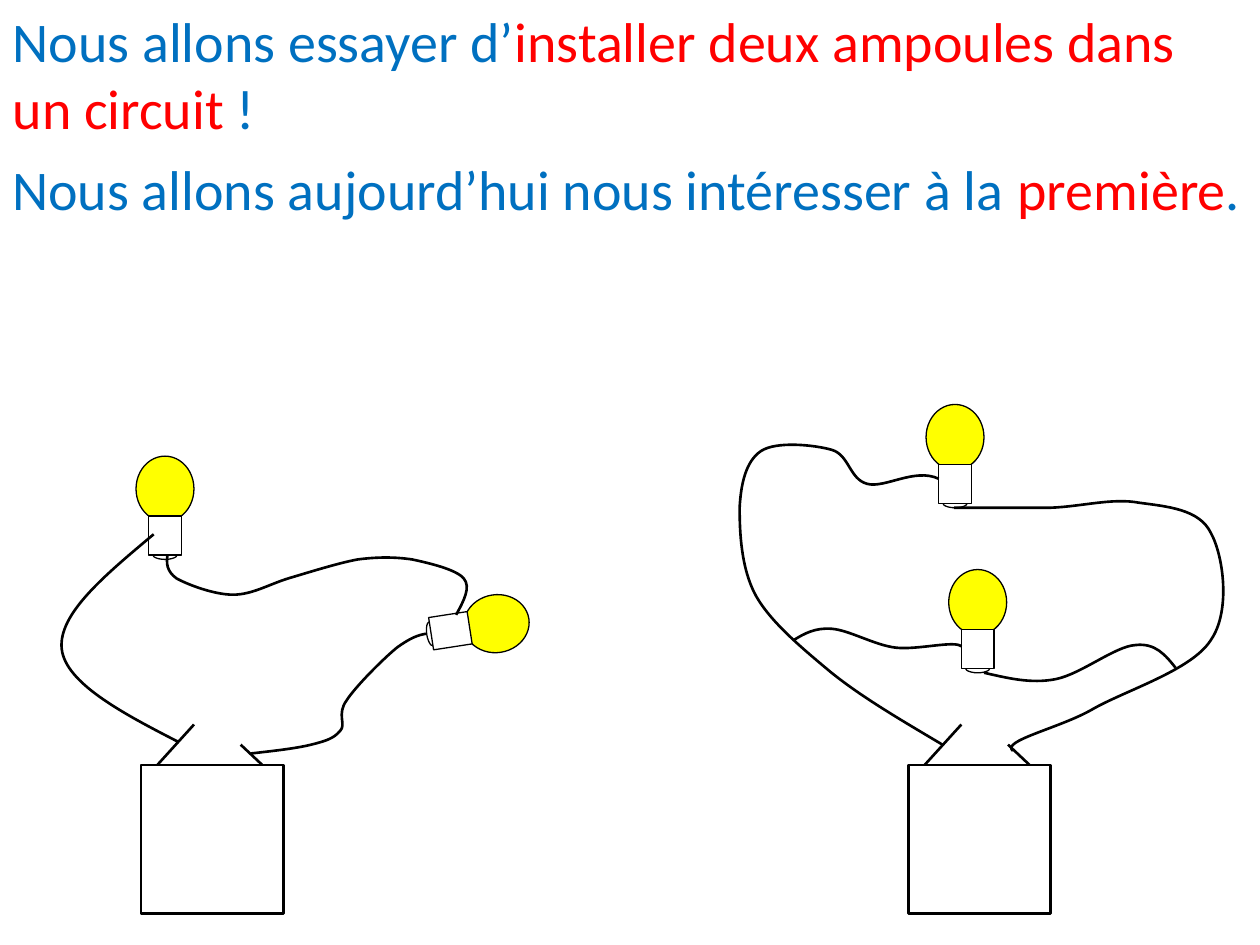
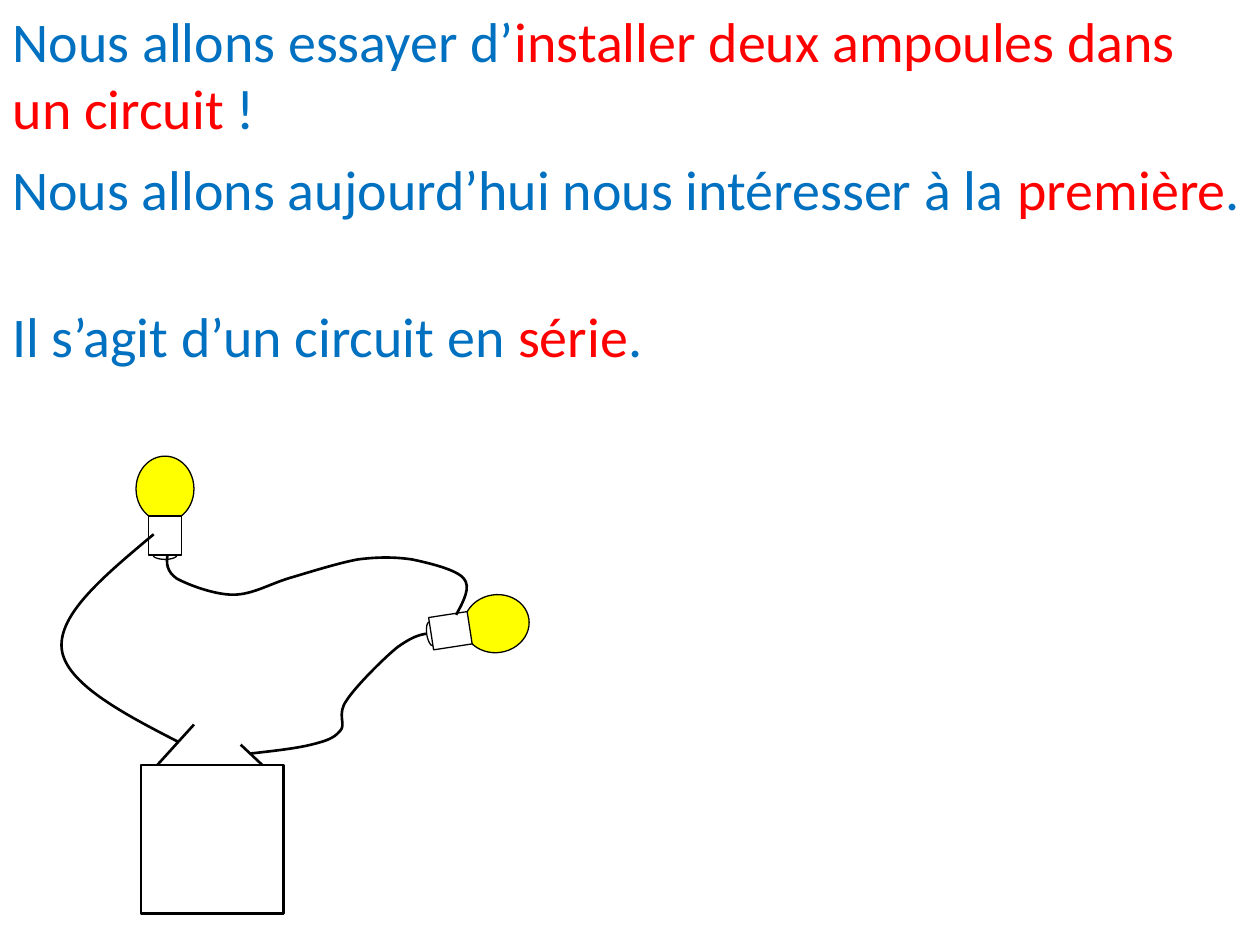
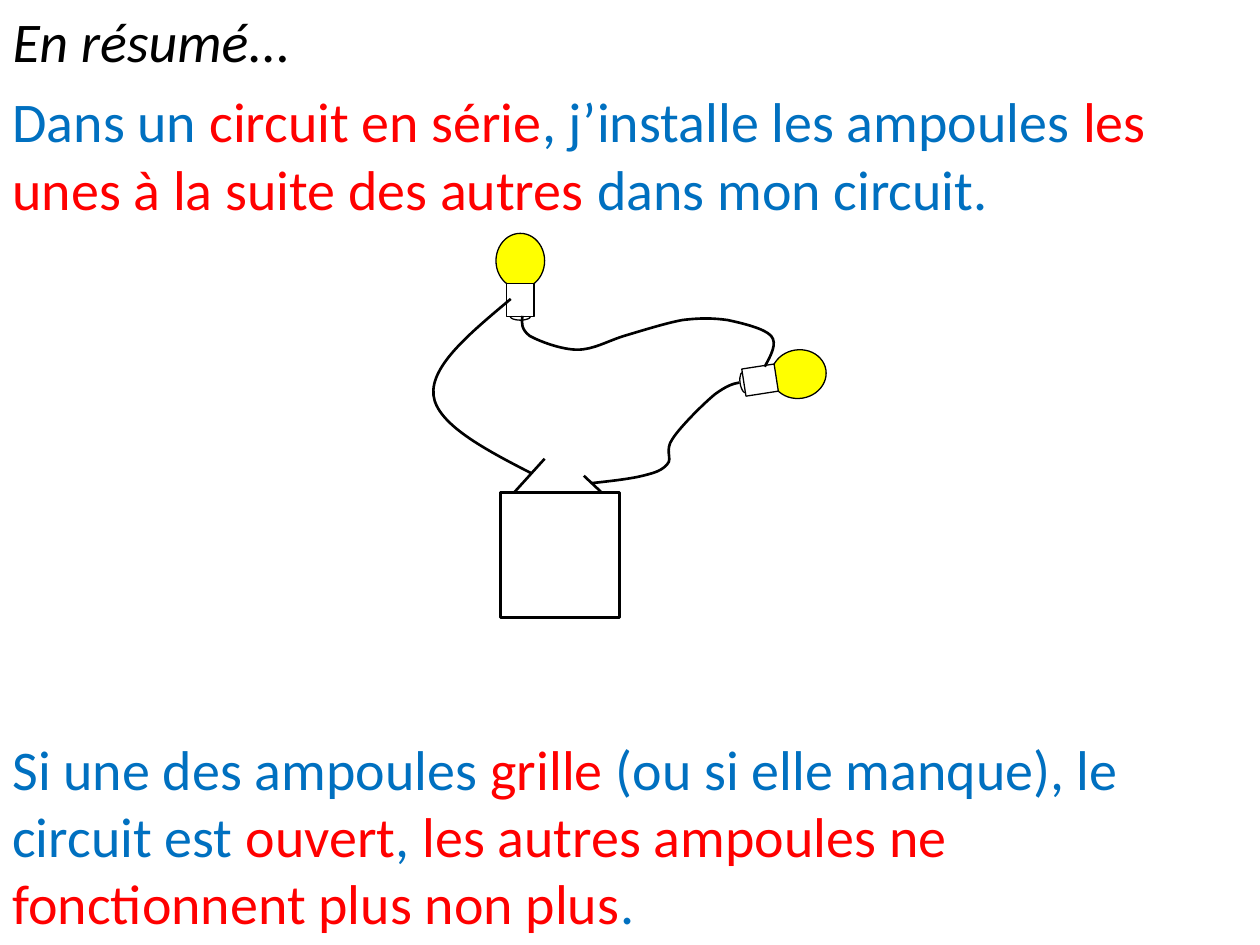
from dataclasses import dataclass
from math import cos, radians, sin

from lxml import etree
from pptx import Presentation, util as u
from pptx.dml.color import RGBColor
from pptx.enum import shapes as s, text as t
from pptx.oxml.ns import qn

Point = tuple[float, float]


@dataclass(frozen=True)
class Theme:
    font: str = "Calibri"
    size: int = 32
    blue: str = "0070C0"
    red: str = "FF0000"
    black: str = "000000"
    white: str = "FFFFFF"
    yellow: str = "FFFF00"
    thin: float = 0.75
    thick: float = 1.5


@dataclass(frozen=True)
class Part:
    kind: s.MSO_SHAPE
    drop: float
    width: float
    height: float
    fill: str


@dataclass(frozen=True)
class Bulb:
    x: float
    y: float
    turn: float = 0


@dataclass(frozen=True)
class Wire:
    start: Point
    curves: list[tuple[float, ...]]


@dataclass(frozen=True)
class Circuit:
    home: Point
    bulbs: list[Bulb]
    wires: list[Wire]


@dataclass(frozen=True)
class View:
    home: Point
    goal: Point
    scale: float

    def spot(self, x: float, y: float) -> tuple[int, int]:
        left = self.goal[0] + (x - self.home[0]) * self.scale
        top = self.goal[1] + (y - self.home[1]) * self.scale
        return u.Inches(left), u.Inches(top)

    def span(self, size: float) -> int:
        return u.Inches(size * self.scale)


THEME = Theme()
BOX = (1.13, 1.18)
TABS = [((0.13, 0), (0.42, -0.32)), ((0.79, -0.16), (0.96, 0))]
PARTS = [
    Part(s.MSO_SHAPE.OVAL, 0, 0.46, 0.52, THEME.yellow),
    Part(s.MSO_SHAPE.OVAL, 0.52, 0.2, 0.08, THEME.white),
    Part(s.MSO_SHAPE.RECTANGLE, 0.37, 0.26, 0.31, THEME.white),
]

SERIES = Circuit(
    home=(1.12, 6.07),
    bulbs=[Bulb(1.31, 3.88), Bulb(3.94, 4.95, 81.2)],
    wires=[
        Wire((1.33, 4.4), [
            (1.32, 4.47, 1.32, 4.53, 1.4, 4.59),
            (1.49, 4.64, 1.7, 4.72, 1.85, 4.72),
            (2, 4.72, 2.13, 4.64, 2.29, 4.59),
            (2.46, 4.54, 2.68, 4.47, 2.84, 4.44),
            (3, 4.42, 3.13, 4.42, 3.27, 4.44),
            (3.41, 4.47, 3.62, 4.52, 3.68, 4.59),
            (3.74, 4.66, 3.68, 4.77, 3.62, 4.88),
        ]),
        Wire((3.38, 5.03), [
            (3.32, 5.04, 3.26, 5.06, 3.15, 5.14),
            (3.04, 5.23, 2.82, 5.45, 2.75, 5.56),
            (2.67, 5.67, 2.75, 5.75, 2.7, 5.8),
            (2.65, 5.86, 2.59, 5.88, 2.47, 5.91),
            (2.35, 5.94, 2.17, 5.96, 1.99, 5.98),
        ]),
        Wire((1.42, 5.89), [
            (0.97, 5.66, 0.52, 5.42, 0.49, 5.15),
            (0.46, 4.87, 0.84, 4.56, 1.22, 4.24),
        ]),
    ],
)

PARALLEL = Circuit(
    home=(7.21, 6.07),
    bulbs=[Bulb(7.76, 4.78), Bulb(7.58, 3.47)],
    wires=[
        Wire((7.48, 5.91), [
            (7.16, 5.72, 6.85, 5.54, 6.6, 5.34),
            (6.36, 5.14, 6.12, 4.94, 6, 4.73),
            (5.88, 4.51, 5.87, 4.22, 5.87, 4.03),
            (5.88, 3.84, 5.92, 3.66, 6.04, 3.58),
            (6.16, 3.5, 6.46, 3.53, 6.6, 3.57),
            (6.74, 3.61, 6.74, 3.8, 6.88, 3.84),
            (7.02, 3.88, 7.26, 3.71, 7.45, 3.8),
        ]),
        Wire((6.3, 5.08), [
            (6.38, 5.03, 6.47, 4.98, 6.6, 4.99),
            (6.74, 5, 6.94, 5.12, 7.11, 5.14),
            (7.28, 5.16, 7.58, 5.08, 7.63, 5.13),
        ]),
        Wire((7.57, 4.03), [
            (7.83, 4.03, 8.1, 4.03, 8.34, 4.03),
            (8.59, 4.02, 8.83, 3.95, 9.04, 3.99),
            (9.26, 4.02, 9.52, 4.04, 9.61, 4.23),
            (9.71, 4.41, 9.77, 4.85, 9.61, 5.08),
            (9.46, 5.32, 8.93, 5.48, 8.67, 5.63),
            (8.41, 5.78, 7.94, 5.88, 8.04, 5.96),
        ]),
        Wire((7.81, 5.34), [
            (7.99, 5.38, 8.18, 5.43, 8.38, 5.39),
            (8.58, 5.35, 8.85, 5.13, 9.01, 5.12),
            (9.17, 5.1, 9.25, 5.2, 9.33, 5.3),
        ]),
    ],
)


def ink(item, width: float) -> None:
    item.line.color.rgb = RGBColor.from_string(THEME.black)
    item.line.width = u.Pt(width)


def block(group, view: View, kind, x: float, y: float, width: float,
          height: float, fill: str, line: float, turn: float = 0) -> None:
    item = group.shapes.add_shape(
        kind, *view.spot(x, y), view.span(width), view.span(height))
    item.rotation = turn
    item.fill.solid()
    item.fill.fore_color.rgb = RGBColor.from_string(fill)
    ink(item, line)
    item.shadow.inherit = False


def cell(group, view: View) -> None:
    x, y = view.home
    block(group, view, s.MSO_SHAPE.RECTANGLE, x, y, *BOX, THEME.white, THEME.thick)
    for head, tail in TABS:
        tab = group.shapes.add_connector(
            s.MSO_CONNECTOR.STRAIGHT,
            *view.spot(x + head[0], y + head[1]),
            *view.spot(x + tail[0], y + tail[1]))
        ink(tab, THEME.thick)
        etree.SubElement(tab.element.spPr, qn("a:effectLst"))


def lamp(group, view: View, bulb: Bulb) -> None:
    angle = radians(bulb.turn)
    for part in PARTS:
        x = bulb.x - part.drop * sin(angle) - part.width / 2
        y = bulb.y + part.drop * cos(angle) - part.height / 2
        block(group, view, part.kind, x, y, part.width, part.height,
              part.fill, THEME.thin, bulb.turn)


def cable(group, view: View, wire: Wire) -> None:
    pen = group.shapes.build_freeform(*view.spot(*wire.start), scale=1.0)
    pen.add_line_segments([view.spot(*c[4:]) for c in wire.curves], close=False)
    item = pen.convert_to_shape()
    left, top = (min(axis) for axis in zip(
        view.spot(*wire.start), *(view.spot(*c[4:]) for c in wire.curves)))
    for step, curve in zip(list(item.element.iter(qn("a:lnTo"))), wire.curves):
        bend = etree.Element(qn("a:cubicBezTo"))
        for pair in zip(curve[::2], curve[1::2]):
            x, y = view.spot(*pair)
            etree.SubElement(bend, qn("a:pt"), x=str(x - left), y=str(y - top))
        step.getparent().replace(step, bend)
    item.fill.background()
    ink(item, THEME.thick)
    item.shadow.inherit = False


def draw(slide, plan: Circuit, goal: Point | None = None, scale: float = 1) -> None:
    view = View(plan.home, goal or plan.home, scale)
    group = slide.shapes.add_group_shape()
    cell(group, view)
    for bulb in plan.bulbs:
        lamp(group, view, bulb)
    for wire in plan.wires:
        cable(group, view, wire)


def write(slide, words: str, top: float, height: float, *, title: bool = False,
          color: str = THEME.blue, accent: str = THEME.red,
          italic: bool = False) -> None:
    area = tuple(u.Inches(n) for n in (0, top, 10, height))
    if title:
        item = slide.shapes.title
        item.left, item.top, item.width, item.height = area
    else:
        item = slide.shapes.add_textbox(*area)
    frame = item.text_frame
    frame.word_wrap = True
    frame.auto_size = t.MSO_AUTO_SIZE.SHAPE_TO_FIT_TEXT
    frame.vertical_anchor = t.MSO_ANCHOR.TOP
    para = frame.paragraphs[0]
    para.alignment = t.PP_ALIGN.LEFT
    for i, piece in enumerate(words.split("*")):
        run = para.add_run()
        run.text = piece
        run.font.name = THEME.font
        run.font.size = u.Pt(THEME.size)
        run.font.italic = italic
        run.font.color.rgb = RGBColor.from_string(accent if i % 2 else color)


def page(deck):
    return deck.slides.add_slide(deck.slide_layouts[5])


def intro(deck):
    slide = page(deck)
    write(slide, "Nous allons essayer d’*installer deux ampoules dans un circuit* !",
          0, 1.18, title=True)
    write(slide, "Nous allons aujourd’hui nous intéresser à la *première*.", 1.18, 1.18)
    return slide


def main() -> None:
    deck = Presentation()
    deck.slide_width, deck.slide_height = u.Inches(10), u.Inches(7.5)

    both = intro(deck)
    draw(both, PARALLEL)
    draw(both, SERIES)

    single = intro(deck)
    draw(single, SERIES)
    write(single, "Il s’agit d’un circuit en *série*.", 2.34, 0.64)

    recap = page(deck)
    write(recap, "En résumé...", 0, 0.64, title=True, color=THEME.black, italic=True)
    write(recap, "Dans un *circuit en série*, j’installe les ampoules "
          "*les unes à la suite des autres* dans mon circuit.", 0.64, 1.18)
    draw(recap, SERIES, goal=(3.97, 3.91), scale=0.84)
    write(recap, "Si une des ampoules *grille* (ou si elle manque), le circuit est "
          "*ouvert*, *les autres ampoules ne fonctionnent plus non plus*.", 5.78, 1.72)

    deck.save("out.pptx")


if __name__ == "__main__":
    main()
